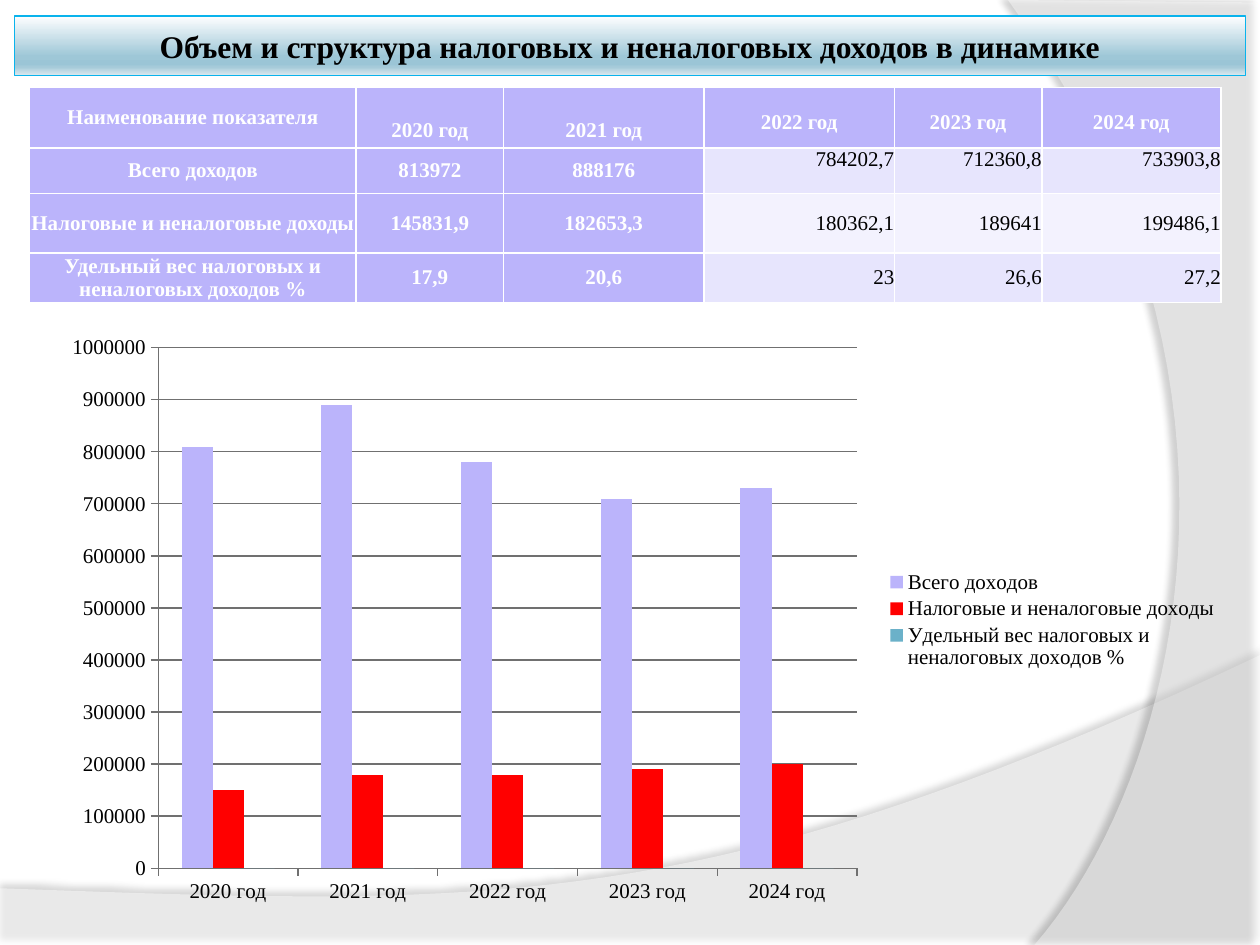
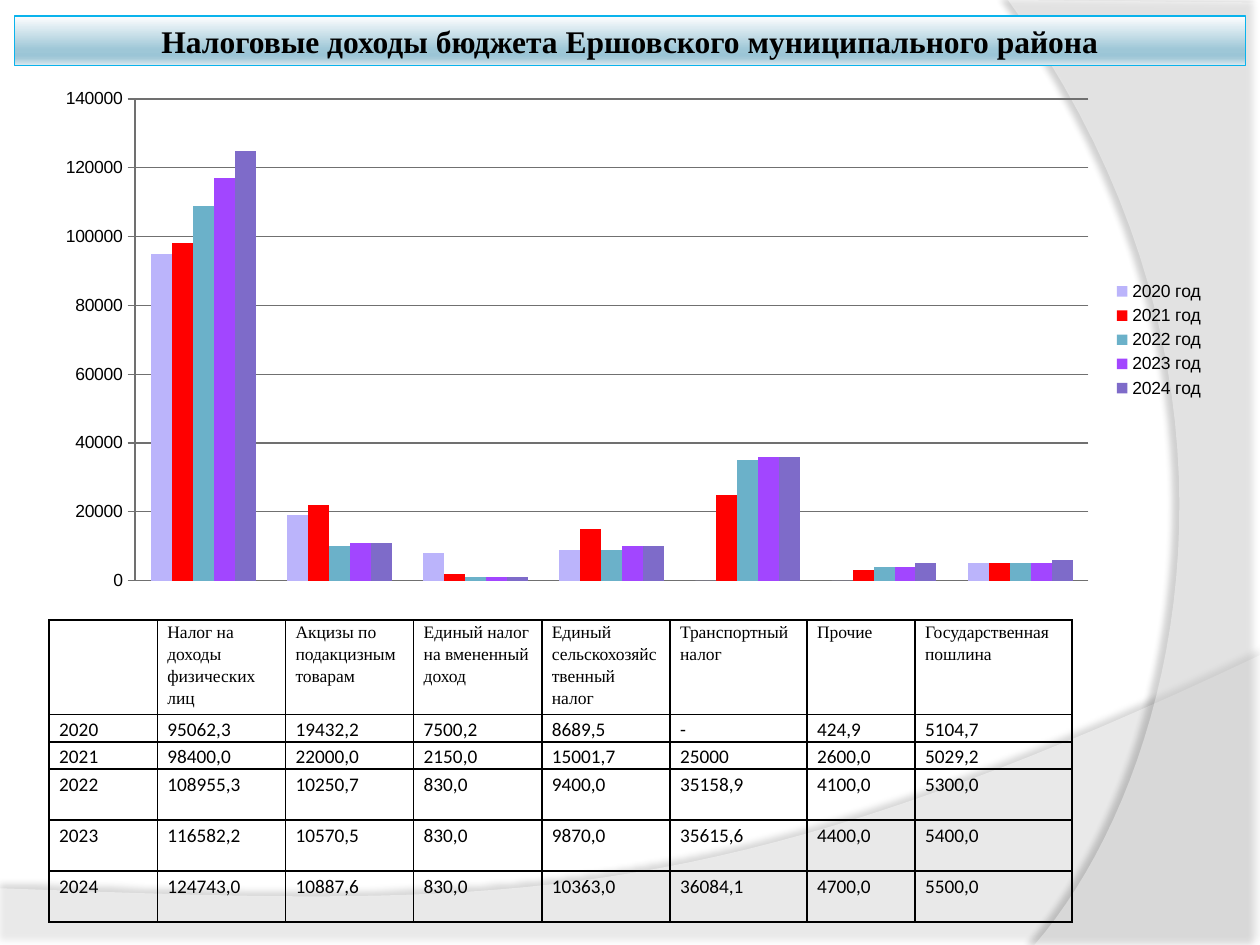
from lxml import etree
from pptx import Presentation
from pptx.chart.data import CategoryChartData
from pptx.dml.color import RGBColor
from pptx.enum.chart import XL_CHART_TYPE, XL_LEGEND_POSITION, XL_TICK_MARK
from pptx.enum.shapes import MSO_SHAPE
from pptx.enum.text import MSO_ANCHOR, PP_ALIGN
from pptx.oxml.ns import qn
from pptx.util import Emu, Inches, Pt

CLUSTERED = XL_CHART_TYPE.COLUMN_CLUSTERED
LEGEND_RIGHT = XL_LEGEND_POSITION.RIGHT
TICK_OUTSIDE, TICK_NONE = XL_TICK_MARK.OUTSIDE, XL_TICK_MARK.NONE
RECTANGLE = MSO_SHAPE.RECTANGLE
TOP, MIDDLE, BOTTOM = MSO_ANCHOR.TOP, MSO_ANCHOR.MIDDLE, MSO_ANCHOR.BOTTOM
LEFT, CENTER, RIGHT = PP_ALIGN.LEFT, PP_ALIGN.CENTER, PP_ALIGN.RIGHT

WIDTH, HEIGHT = Inches(10), Inches(7.5)
SERIF = "Times New Roman"
BLACK, WHITE, GRID_GRAY, BAND_LINE = "000000", "FFFFFF", "707070", "0AB3EC"
LILAC, LILAC_LIGHT, LILAC_PALE = "BBB4FB", "E7E5FD", "F3F2FE"
SERIES_COLORS = [LILAC, "FF0000", "6BB1C9", "A246FF", "7E6BC9"]
BAND_STOPS = [(0, "FEFEFF"), (68, "9EC7D7"), (81, "9BC5D6"),
              (86, "A5CAD9"), (100, "DAE8EE")]

# Rows of both tables; the charts take their rounded values from them
INCOME_ROWS = [
    ["Наименование показателя", "2020 год", "2021 год", "2022 год",
     "2023 год", "2024 год"],
    ["Всего доходов", "813972", "888176", "784202,7", "712360,8", "733903,8"],
    ["Налоговые и неналоговые доходы", "145831,9", "182653,3", "180362,1",
     "189641", "199486,1"],
    ["Удельный вес налоговых и неналоговых доходов %", "17,9", "20,6", "23",
     "26,6", "27,2"],
]
TAX_ROWS = [
    ["", "Налог на доходы физических лиц", "Акцизы по подакцизным товарам",
     "Единый налог на вмененный доход", "Единый сельскохозяйственный налог",
     "Транспортный налог", "Прочие", "Государственная пошлина"],
    ["2020", "95062,3", "19432,2", "7500,2", "8689,5", "-", "424,9", "5104,7"],
    ["2021", "98400,0", "22000,0", "2150,0", "15001,7", "25000", "2600,0", "5029,2"],
    ["2022", "108955,3", "10250,7", "830,0", "9400,0", "35158,9", "4100,0", "5300,0"],
    ["2023", "116582,2", "10570,5", "830,0", "9870,0", "35615,6", "4400,0", "5400,0"],
    ["2024", "124743,0", "10887,6", "830,0", "10363,0", "36084,1", "4700,0", "5500,0"],
]


def color(hex_code):
    return RGBColor.from_string(hex_code)


def place(box):
    """Turn left, top, width, height in percent of the slide into lengths."""
    return [Emu(int(share * side / 100))
            for share, side in zip(box, (WIDTH, HEIGHT, WIDTH, HEIGHT))]


def add_element(parent, tag, **attributes):
    element = etree.SubElement(parent, qn(tag))
    for name, value in attributes.items():
        element.set(name, str(value))
    return element


def set_font(font, hex_code, **values):
    for name, value in values.items():
        setattr(font, name, value)
    font.color.rgb = color(hex_code)


def bezier(start, first, second, end, steps=40):
    for step in range(1, steps + 1):
        t = step / steps
        yield tuple((1 - t) ** 3 * a + 3 * t * (1 - t) ** 2 * b
                    + 3 * t ** 2 * (1 - t) * c + t ** 3 * d
                    for a, b, c, d in zip(start, first, second, end))


# Background: two translucent waves with soft shadows
def add_wave(slide, points, opacity, shadow_opacity, distance, angle):
    corners = [(Inches(x), Inches(y)) for x, y in points]
    builder = slide.shapes.build_freeform(*corners[0])
    builder.add_line_segments(corners[1:], close=True)
    wave = builder.convert_to_shape()
    wave.fill.solid()
    wave.fill.fore_color.rgb = color(WHITE)
    wave.line.fill.background()
    properties = wave.element.spPr
    fill_color = properties.find(qn("a:solidFill")).find(qn("a:srgbClr"))
    add_element(fill_color, "a:alpha", val=opacity * 1000)
    effects = add_element(properties, "a:effectLst")
    shadow = add_element(effects, "a:outerShdw", blurRad=Pt(4), dist=Pt(distance),
                         dir=angle * 60000, algn="ctr", rotWithShape=0)
    shadow_color = add_element(shadow, "a:srgbClr", val=BLACK)
    add_element(shadow_color, "a:alpha", val=shadow_opacity * 1000)


def add_background(slide):
    bottom = [(0, 7.05), (0, 7.5), (10, 7.5), (10, 5.2),
              *bezier((10, 5.2), (5.59, 7.29), (3.91, 7.19), (0, 7.05))]
    side = [(10, 0.02), (10, 7.5), (8.21, 7.5),
            *bezier((8.21, 7.5), (9.35, 6.19), (10.18, 3), (8, 0))]
    add_wave(slide, bottom, 45, 35, 3.5, 270)
    add_wave(slide, side, 40, 45, 4, 180)


# Title band with a vertical gradient
def add_title(slide, text, height):
    band = slide.shapes.add_shape(RECTANGLE, *place((1.15, 1.7, 97.7, height)))
    band.shadow.inherit = False
    band.fill.gradient()
    band.fill.gradient_angle = 270
    stops = band.element.spPr.find(qn("a:gradFill")).find(qn("a:gsLst"))
    for stop in list(stops):
        stops.remove(stop)
    for position, hex_code in BAND_STOPS:
        stop = add_element(stops, "a:gs", pos=position * 1000)
        add_element(stop, "a:srgbClr", val=hex_code)
    band.line.color.rgb = color(BAND_LINE)
    band.line.width = Pt(0.75)
    frame = band.text_frame
    frame.word_wrap = True
    frame.vertical_anchor = MIDDLE
    for side in ("left", "top", "right", "bottom"):
        setattr(frame, f"margin_{side}", Inches(0.05))
    paragraph = frame.paragraphs[0]
    paragraph.text = text
    paragraph.alignment = CENTER
    set_font(paragraph.font, BLACK, name=SERIF, size=Pt(18), bold=True)


# Tables
def set_borders(cell, hex_code, widths):
    properties = cell._tc.get_or_add_tcPr()
    for side, width in zip("LRTB", widths):
        line = add_element(properties, f"a:ln{side}", w=Pt(width))
        fill = add_element(line, "a:solidFill")
        add_element(fill, "a:srgbClr", val=hex_code)


def income_cell(row, column):
    """Format of a cell: lilac header and first columns, banded values."""
    look = {"fill": LILAC, "text": WHITE, "align": CENTER, "anchor": MIDDLE,
            "border": WHITE, "widths": (1, 1, 1.5 if row == 1 else 1,
                                        1.5 if row == 0 else 1),
            "font": {"name": SERIF, "size": Pt(12), "bold": True}}
    if row == 0 and column > 0:
        look.update(anchor=BOTTOM, margin_bottom=0.05 if column < 3 else 0.11)
    elif column > 2:
        look.update(fill=LILAC_LIGHT if row % 2 else LILAC_PALE, text=BLACK,
                    align=RIGHT, anchor=TOP if row == 1 else MIDDLE)
        look["font"]["bold"] = False
    return look


def tax_cell(row, column):
    font = {"name": "Calibri", "size": Pt(11)} if row else {"name": SERIF, "size": Pt(10)}
    return {"fill": None, "text": BLACK, "align": LEFT, "anchor": TOP,
            "border": BLACK, "widths": (1, 1, 1, 1), "side_margin": 0.08,
            "spacing": 1.15, "font": {**font, "bold": False}}


def format_cell(cell, text, look):
    cell.margin_left = cell.margin_right = Inches(look.get("side_margin", 0))
    cell.margin_top = 0
    cell.margin_bottom = Inches(look.get("margin_bottom", 0))
    cell.vertical_anchor = look["anchor"]
    set_borders(cell, look["border"], look["widths"])
    if look["fill"]:
        cell.fill.solid()
        cell.fill.fore_color.rgb = color(look["fill"])
    else:
        cell.fill.background()
    paragraph = cell.text_frame.paragraphs[0]
    paragraph.text = text
    paragraph.alignment = look["align"]
    paragraph.line_spacing = look.get("spacing", 1.0)
    set_font(paragraph.font, look["text"], **look["font"])


def add_data_table(slide, rows, box, column_shares, row_shares, cell_look):
    left, top, width, height = place(box)
    table = slide.shapes.add_table(len(rows), len(rows[0]), left, top, width, height).table
    table.first_row = table.horz_banding = False
    for column, share in zip(table.columns, column_shares):
        column.width = int(width * share / sum(column_shares))
    for row, share in zip(table.rows, row_shares):
        row.height = int(height * share / sum(row_shares))
    for row_index, texts in enumerate(rows):
        for column_index, text in enumerate(texts):
            format_cell(table.cell(row_index, column_index), text,
                        cell_look(row_index, column_index))


# Charts
def rounded(text, unit):
    value = 0 if text == "-" else float(text.replace(",", "."))
    return round(value / unit) * unit


def set_layout(parent, position, inner=False):
    """Fix a chart part at x, y, w, h given as shares of the chart."""
    layout = parent.find(qn("c:layout"))
    if layout is None:
        layout = add_element(parent, "c:layout")
        anchor = parent.find(qn("c:legendPos"))
        if anchor is not None:
            anchor.addnext(layout)
        else:
            parent.insert(0, layout)
    manual = add_element(layout, "c:manualLayout")
    if inner:
        add_element(manual, "c:layoutTarget", val="inner")
    for axis in "xy":
        add_element(manual, f"c:{axis}Mode", val="edge")
    for side, share in zip("xywh", position):
        add_element(manual, f"c:{side}", val=share)


def add_column_chart(slide, categories, series, box, font, top_value, step, unit,
                     plot_area, legend_area, show_categories):
    data = CategoryChartData()
    data.categories = categories
    for name, texts in series:
        data.add_series(name, [rounded(text, unit) for text in texts])
    chart = slide.shapes.add_chart(CLUSTERED, *place(box), data).chart
    chart.has_title = False
    set_font(chart.font, BLACK, **font)
    plot = chart.plots[0]
    plot.vary_by_categories = False
    plot.gap_width, plot.overlap = 150, 0
    for column_series, hex_code in zip(plot.series, SERIES_COLORS):
        column_series.format.fill.solid()
        column_series.format.fill.fore_color.rgb = color(hex_code)
    value_axis, category_axis = chart.value_axis, chart.category_axis
    value_axis.minimum_scale, value_axis.maximum_scale = 0, top_value
    value_axis.major_unit = step
    value_axis.tick_labels.number_format = "General"
    value_axis.tick_labels.number_format_is_linked = False
    value_axis.has_major_gridlines = True
    for axis in (value_axis, category_axis):
        axis.major_tick_mark, axis.minor_tick_mark = TICK_OUTSIDE, TICK_NONE
    for part in (value_axis.major_gridlines, value_axis, category_axis):
        part.format.line.color.rgb = color(GRID_GRAY)
        part.format.line.width = Pt(0.75)
    category_axis.visible = show_categories
    chart.has_legend = True
    chart.legend.position = LEGEND_RIGHT
    chart.legend.include_in_layout = False
    chart_element = chart.element.find(qn("c:chart"))
    set_layout(chart_element.find(qn("c:plotArea")), plot_area, inner=True)
    set_layout(chart_element.find(qn("c:legend")), legend_area)


# Slides
def build_income_slide(slide):
    add_background(slide)
    add_title(slide, "Объем и структура налоговых и неналоговых доходов в динамике", 6.27)
    add_data_table(slide, INCOME_ROWS, (2.35, 9.25, 94.55, 22.75),
                   [2.59, 1.17, 1.59, 1.51, 1.17, 1.42], [0.48, 0.36, 0.47, 0.39],
                   income_cell)
    add_column_chart(slide, INCOME_ROWS[0][1:],
                     [(row[0], row[1:]) for row in INCOME_ROWS[1:]],
                     (4.1, 34.3, 94, 62.6), {"name": SERIF, "size": Pt(12)},
                     1000000, 100000, 10000, (0.09, 0.04, 0.59, 0.88),
                     (0.7, 0.41, 0.29, 0.18), True)


def build_tax_slide(slide):
    add_background(slide)
    add_title(slide, "Налоговые доходы бюджета Ершовского муниципального района", 5.2)
    add_data_table(slide, TAX_ROWS, (3.9, 65.6, 81.2, 31.9),
                   [0.86, 1.02, 1.02, 1.02, 1.02, 1.09, 0.86, 1.25],
                   [0.74, 0.21, 0.21, 0.4, 0.4, 0.4], tax_cell)
    add_column_chart(slide, [str(index) for index in range(1, len(TAX_ROWS[0]))],
                     [(f"{row[0]} год", row[1:]) for row in TAX_ROWS[1:]],
                     (3.25, 8.27, 93.4, 55.4), {"name": "Arial", "size": Pt(10)},
                     140000, 20000, 1000, (0.08, 0.04, 0.81, 0.92),
                     (0.91, 0.38, 0.08, 0.24), False)


def main():
    presentation = Presentation()
    presentation.slide_width, presentation.slide_height = WIDTH, HEIGHT
    blank = presentation.slide_layouts[6]
    for build in (build_income_slide, build_tax_slide):
        build(presentation.slides.add_slide(blank))
    presentation.save("out.pptx")


if __name__ == "__main__":
    main()
